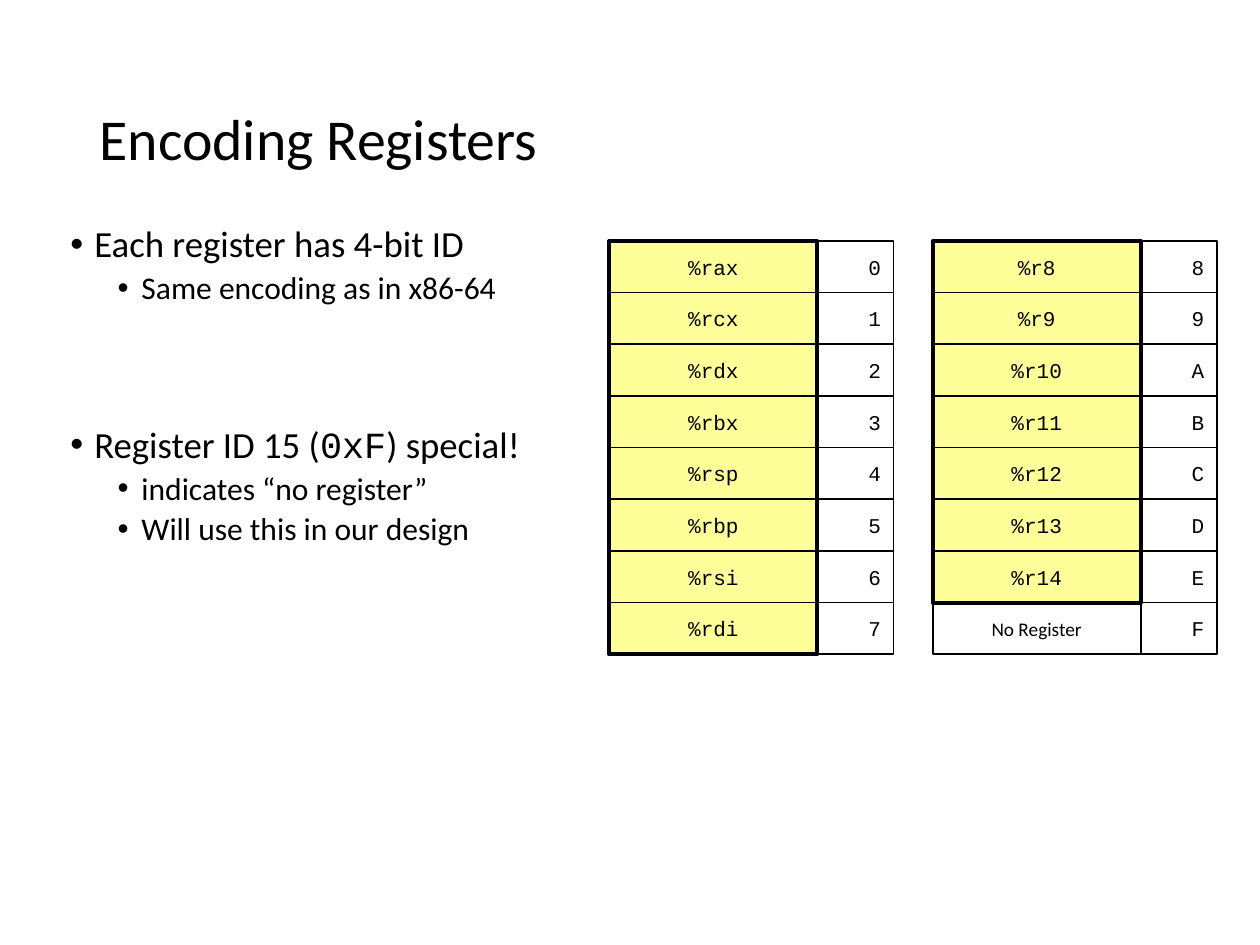
from dataclasses import dataclass

import lxml.etree
import pptx
import pptx.dml.color
import pptx.enum.shapes
import pptx.enum.text
import pptx.oxml.ns
import pptx.util

Cm = pptx.util.Cm
Pt = pptx.util.Pt
RGB = pptx.dml.color.RGBColor
ALIGN = pptx.enum.text.PP_ALIGN
MIDDLE = pptx.enum.text.MSO_ANCHOR.MIDDLE


@dataclass(frozen=True)
class Theme:
    ink: RGB = RGB(0x00, 0x00, 0x00)
    register: RGB = RGB(0xFF, 0xFF, 0x99)
    text: str = "Calibri"
    code: str = "Courier New"
    title_size: Pt = Pt(33)
    point_size: Pt = Pt(21)
    detail_size: Pt = Pt(18)
    cell_size: Pt = Pt(12)
    note_size: Pt = Pt(11)
    grid_line: Pt = Pt(1)
    frame_line: Pt = Pt(2.25)


theme = Theme()


def set_font(paragraph, size, face):
    paragraph.font.size = size
    paragraph.font.name = face
    paragraph.font.color.rgb = theme.ink


def add_box(group, left, top, width, height, line):
    box = group.shapes.add_shape(
        pptx.enum.shapes.MSO_SHAPE.RECTANGLE, left, top, width, height)
    box.shadow.inherit = False
    box.fill.background()
    box.line.color.rgb = theme.ink
    box.line.width = line
    return box


deck = pptx.Presentation()
deck.slide_width, deck.slide_height = Cm(25.37), Cm(19.02)
slide = deck.slides.add_slide(deck.slide_layouts[5])

title = slide.shapes.title
title.left, title.top, title.width, title.height = Cm(1.75), Cm(1.02), Cm(21.87), Cm(3.68)
title.text_frame.text = "Encoding Registers"
title.text_frame.vertical_anchor = MIDDLE
heading = title.text_frame.paragraphs[0]
heading.alignment = ALIGN.LEFT
heading.line_spacing = 0.9
set_font(heading, theme.title_size, theme.text)

points = [
    (0, 7.5, ["Each register has 4-bit ID"]),
    (1, 3.8, ["Same encoding as in x86-64"]),
    (0, 68.5, ["Register ID 15 (", "0xF", ") special!"]),
    (1, 3.8, ["indicates “no register”"]),
    (1, 3.8, ["Will use this in our design"]),
]
body = slide.shapes.add_textbox(Cm(1.17), Cm(4.42), Cm(23.04), Cm(14.6)).text_frame
body.word_wrap = True
for index, (level, space_before, pieces) in enumerate(points):
    point = body.add_paragraph() if index else body.paragraphs[0]
    point.level = level
    point.line_spacing = 0.9
    point.space_before = Pt(space_before)
    for piece in pieces:
        run = point.add_run()
        run.text = piece
        if piece == "0xF":
            run.font.name = theme.code
    set_font(point, theme.detail_size if level else theme.point_size, theme.text)
    properties = point._p.get_or_add_pPr()
    properties.set("marL", str(Cm(1.43 if level else 0.48)))
    properties.set("indent", str(-Cm(0.48)))
    bullet_font = lxml.etree.Element(pptx.oxml.ns.qn("a:buFont"), typeface="Arial")
    bullet = lxml.etree.Element(pptx.oxml.ns.qn("a:buChar"), char="•")
    defaults = properties.find(pptx.oxml.ns.qn("a:defRPr"))
    defaults.addprevious(bullet_font)
    defaults.addprevious(bullet)

no_register = "No Register"
banks = [
    (Cm(12.27), "01234567",
     ["%rax", "%rcx", "%rdx", "%rbx", "%rsp", "%rbp", "%rsi", "%rdi"]),
    (Cm(18.78), "89ABCDEF",
     ["%r8", "%r9", "%r10", "%r11", "%r12", "%r13", "%r14", no_register]),
]
bank_top, row_height = Cm(4.85), Cm(1.04)
name_width, id_width = Cm(4.19), Cm(1.53)

for bank_left, ids, names in banks:
    bank = slide.shapes.add_group_shape()
    register_count = len(names) - names.count(no_register)
    frame = add_box(bank, bank_left, bank_top, name_width,
                    row_height * register_count, theme.frame_line)
    frame.fill.solid()
    frame.fill.fore_color.rgb = theme.register

    columns = [
        (bank_left, name_width, ALIGN.CENTER, names),
        (bank_left + name_width, id_width, ALIGN.RIGHT, ids),
    ]
    for left, width, alignment, labels in columns:
        for row, label in enumerate(labels):
            cell = add_box(bank, left, bank_top + row * row_height,
                           width, row_height, theme.grid_line)
            cell.text_frame.text = label
            cell.text_frame.word_wrap = False
            cell.text_frame.vertical_anchor = MIDDLE
            entry = cell.text_frame.paragraphs[0]
            entry.alignment = alignment
            if label == no_register:
                set_font(entry, theme.note_size, theme.text)
            else:
                set_font(entry, theme.cell_size, theme.code)

deck.save("out.pptx")
